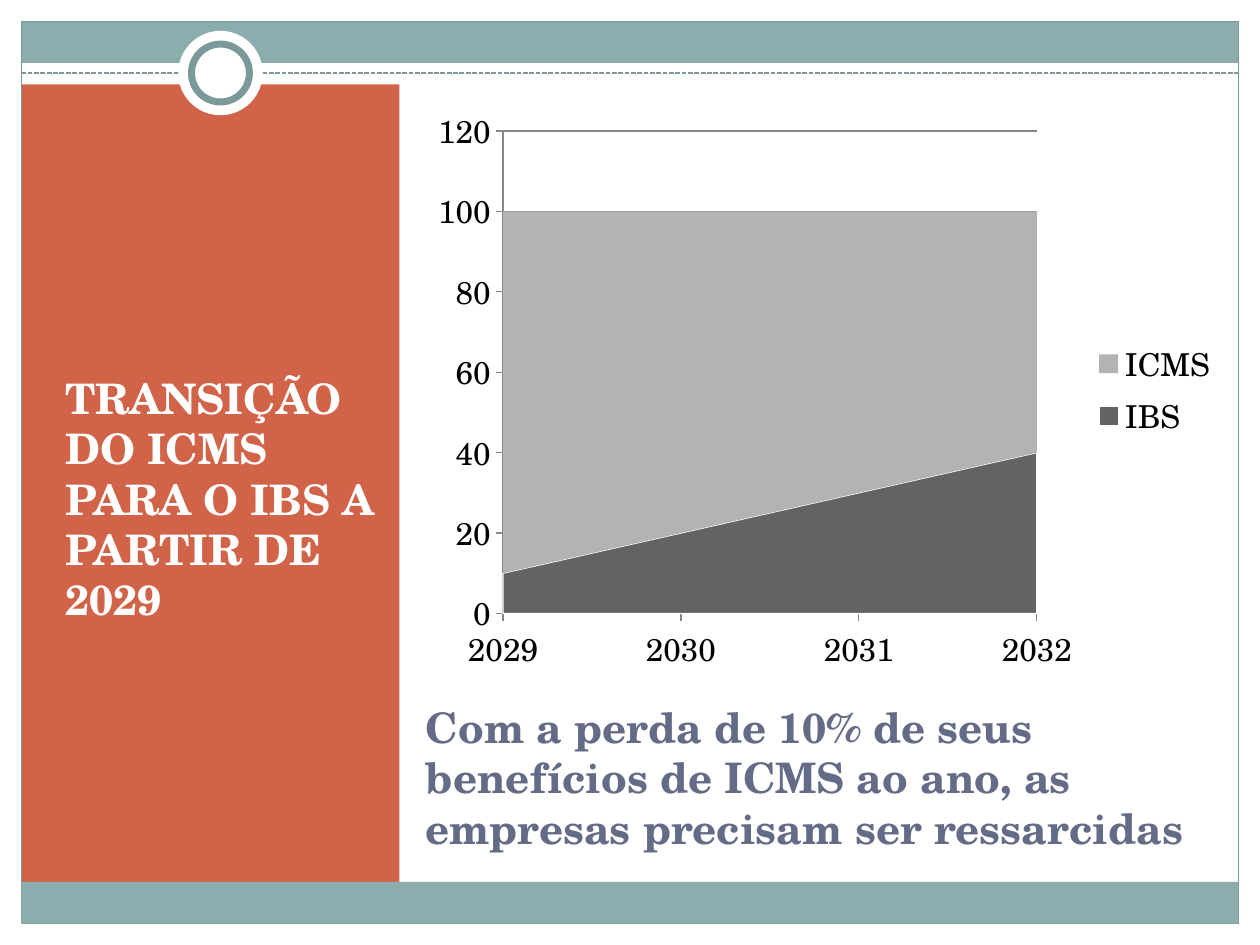
"""Builds the slide on the transition from ICMS to IBS."""
from lxml import etree
from pptx import Presentation
from pptx.chart.data import CategoryChartData
from pptx.dml.color import RGBColor
from pptx.enum import chart as ch, dml, shapes, text
from pptx.oxml import parse_xml
from pptx.oxml.ns import qn
from pptx.util import Inches, Pt

FONT = "TeX Gyre Schola"
WHITE = RGBColor(0xFF, 0xFF, 0xFF)
BLACK = RGBColor(0, 0, 0)
TEAL = RGBColor(0x8C, 0xAD, 0xAE)
EDGE = RGBColor(0x7C, 0x99, 0x9A)
ORANGE = RGBColor(0xD1, 0x63, 0x49)
SLATE = RGBColor(0x64, 0x6B, 0x86)
AXIS = RGBColor(0x87, 0x87, 0x87)
DARK = RGBColor(0x63, 0x63, 0x63)
LIGHT = RGBColor(0xB3, 0xB3, 0xB3)

TITLE = "Com a perda de 10% de seus benefícios de ICMS ao ano, as empresas precisam ser ressarcidas"
SIDE = "TRANSIÇÃO DO ICMS PARA O IBS A PARTIR DE 2029"
YEARS = ["2029", "2030", "2031", "2032"]
SERIES = [("IBS", [10, 20, 30, 40], DARK), ("ICMS", [90, 80, 70, 60], LIGHT)]

W, H, M = 10, 7.5, 0.17
INNER = W - 2 * M
BAND = 0.33
RULE_Y = 0.58
RING_X = 1.75
PANEL_TOP, PANEL_W = 0.67, 3
FOOT_Y = H - M - BAND
PLOT = {"x": 0.1, "y": 0.06, "w": 0.66, "h": 0.82}


def circle(size):
    return RING_X - size / 2, RULE_Y - size / 2, size, size


RECT, OVAL = shapes.MSO_SHAPE.RECTANGLE, shapes.MSO_SHAPE.OVAL
DECOR = [
    (RECT, (M, M, INNER, BAND), TEAL, None),
    (RECT, (M, PANEL_TOP, PANEL_W, FOOT_Y - PANEL_TOP), ORANGE, None),
    (RECT, (M, M, INNER, H - 2 * M), None, 0.75),
    (OVAL, circle(0.67), WHITE, None),
    (OVAL, circle(0.46), WHITE, 4),
    (RECT, (M, FOOT_Y, INNER, BAND), TEAL, None),
]


def box(*lengths):
    return [Inches(n) for n in lengths]


def add_decor(slide, kind, place, fill, width):
    sp = slide.shapes.add_shape(kind, *box(*place))
    sp.shadow.inherit = False
    if fill is None:
        sp.fill.background()
    else:
        sp.fill.solid()
        sp.fill.fore_color.rgb = fill
    if width is None:
        sp.line.fill.background()
    else:
        sp.line.color.rgb = EDGE
        sp.line.width = Pt(width)


def add_rule(slide):
    line = slide.shapes.add_connector(
        shapes.MSO_CONNECTOR.STRAIGHT, *box(M, RULE_Y, W - M, RULE_Y))
    line.line.color.rgb = EDGE
    line.line.width = Pt(0.9)
    line.line.dash_style = dml.MSO_LINE.SQUARE_DOT
    etree.SubElement(line.element.spPr, qn("a:effectLst"))


def write(sp, place, words, color):
    sp.left, sp.top, sp.width, sp.height = box(*place)
    tf = sp.text_frame
    tf.word_wrap = True
    tf.auto_size = text.MSO_AUTO_SIZE.NONE
    tf.vertical_anchor = text.MSO_ANCHOR.MIDDLE
    p = tf.paragraphs[0]
    p.alignment = text.PP_ALIGN.LEFT
    r = p.add_run()
    r.text = words
    r.font.name, r.font.size, r.font.bold = FONT, Pt(24), True
    r.font.color.rgb = color


def set_plot_area(chart):
    parts = "".join(f'<c:{k} val="{v}"/>' for k, v in PLOT.items())
    layout = parse_xml(
        '<c:layout xmlns:c="http://schemas.openxmlformats.org/drawingml/2006/chart">'
        '<c:manualLayout><c:layoutTarget val="inner"/><c:xMode val="edge"/>'
        f'<c:yMode val="edge"/>{parts}</c:manualLayout></c:layout>')
    area = chart.element.find(".//" + qn("c:plotArea"))
    for old in area.findall(qn("c:layout")):
        area.remove(old)
    area.insert(0, layout)
    area.find(".//" + qn("c:crossBetween")).set("val", "midCat")


def add_chart(slide):
    data = CategoryChartData()
    data.categories = YEARS
    for name, values, _ in SERIES:
        data.add_series(name, values)
    chart = slide.shapes.add_chart(
        ch.XL_CHART_TYPE.AREA_STACKED, *box(3.35, 0.76, 6.42, 4.67), data).chart
    chart.font.name, chart.font.size = FONT, Pt(18)
    chart.font.color.rgb = BLACK
    chart.has_title = False
    chart.has_legend = True
    chart.legend.position = ch.XL_LEGEND_POSITION.RIGHT
    chart.legend.include_in_layout = False
    chart.plots[0].vary_by_categories = False
    for series, (_, _, color) in zip(chart.plots[0].series, SERIES):
        series.format.fill.solid()
        series.format.fill.fore_color.rgb = color
        series.format.line.fill.background()
    first = chart.plots[0].series[0].format.line
    first.color.rgb, first.width = WHITE, Pt(0.75)
    value = chart.value_axis
    value.minimum_scale, value.maximum_scale, value.major_unit = 0, 120, 20
    value.has_major_gridlines = True
    value.major_gridlines.format.line.color.rgb = AXIS
    chart.category_axis.has_major_gridlines = False
    for axis in (value, chart.category_axis):
        axis.major_tick_mark = ch.XL_TICK_MARK.OUTSIDE
        axis.minor_tick_mark = ch.XL_TICK_MARK.NONE
        axis.format.line.color.rgb = AXIS
    set_plot_area(chart)


def main():
    prs = Presentation()
    prs.slide_width, prs.slide_height = box(W, H)
    slide = prs.slides.add_slide(prs.slide_layouts[5])
    add_rule(slide)
    for item in DECOR:
        add_decor(slide, *item)
    write(slide.shapes.title, (3.28, 5.5, 6.42, 1.33), TITLE, SLATE)
    add_chart(slide)
    side = slide.shapes.add_textbox(0, 0, 0, 0)
    write(side, (0.42, 1.08, 2.67, 5.75), SIDE, WHITE)
    prs.save("out.pptx")


if __name__ == "__main__":
    main()
